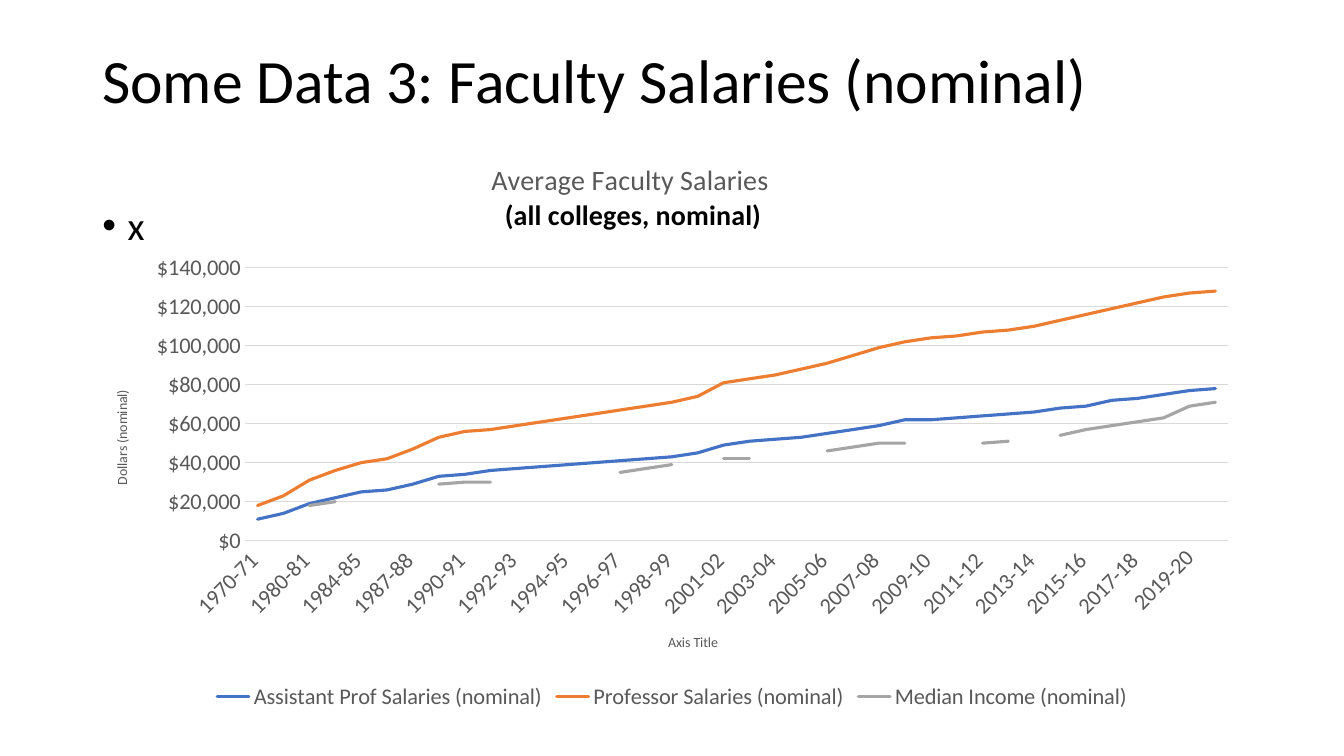
import pptx
import pptx.chart.data
import pptx.dml.color
import pptx.enum.chart
import pptx.enum.text
import pptx.oxml
import pptx.oxml.ns
import pptx.util

PX = 9525  # EMU per px, 96 px to the inch


class Theme:
    font = "Calibri"
    ink, muted, rule = "000000", "595959", "D9D9D9"
    series = ("4472C4", "ED7D31", "A5A5A5")
    title, body, chart_title, label, axis_title = 44, 28, 20, 16, 10
    line, hairline = 2.25, 0.75


YEARS = """1970-71 1975-76 1980-81 1982-83 1984-85 1985-86 1987-88 1989-90 1990-91 1991-92
1992-93 1993-94 1994-95 1995-96 1996-97 1997-98 1998-99 1999-2000 2001-02 2002-03 2003-04
2004-05 2005-06 2006-07 2007-08 2008-09 2009-10 2010-11 2011-12 2012-13 2013-14 2014-15
2015-16 2016-17 2017-18 2018-19 2019-20 2020-21""".split()

# Thousands of dollars; None leaves a gap in the line
SALARIES = {
    "Assistant Prof Salaries (nominal)": [
        11, 14, 19, 22, 25, 26, 29, 33, 34, 36, 37, 38, 39, 40, 41, 42, 43, 45, 49,
        51, 52, 53, 55, 57, 59, 62, 62, 63, 64, 65, 66, 68, 69, 72, 73, 75, 77, 78],
    "Professor Salaries (nominal)": [
        18, 23, 31, 36, 40, 42, 47, 53, 56, 57, 59, 61, 63, 65, 67, 69, 71, 74, 81,
        83, 85, 88, 91, 95, 99, 102, 104, 105, 107, 108, 110, 113, 116, 119, 122, 125, 127, 128],
    "Median Income (nominal)": [
        9, None, 18, 20, None, 21, None, 29, 30, 30, None, None, None, None, 35, 37, 39, None, 42,
        42, None, None, 46, 48, 50, 50, None, None, 50, 51, None, 54, 57, 59, 61, 63, 69, 71],
}


def rgb(color):
    return pptx.dml.color.RGBColor.from_string(color)


def style(font, size, color, bold=False):
    font.name, font.size, font.bold = Theme.font, pptx.util.Pt(size), bold
    font.color.rgb = rgb(color)


def stroke(line, color, width):
    line.color.rgb = rgb(color)
    line.width = pptx.util.Pt(width)


def add_text(page, box, text, size):
    frame = page.shapes.add_textbox(*(PX * length for length in box)).text_frame
    frame.word_wrap = True
    para = frame.paragraphs[0]
    para.text = text
    para.line_spacing = 0.9
    style(para.runs[0].font, size, Theme.ink)
    return frame


def add_title(page, box):
    frame = add_text(page, box, "Some Data 3: Faculty Salaries (nominal)", Theme.title)
    frame.vertical_anchor = pptx.enum.text.MSO_ANCHOR.MIDDLE


def add_body(page, box):
    para = add_text(page, box, "x", Theme.body).paragraphs[0]
    para.space_before = pptx.util.Pt(10)
    # Hanging bullet
    properties = para._p.get_or_add_pPr()
    properties.set("marL", str(24 * PX))
    properties.set("indent", str(-24 * PX))
    namespace = pptx.oxml.ns.nsdecls("a")
    properties.append(pptx.oxml.parse_xml(f'<a:buFont {namespace} typeface="Arial"/>'))
    properties.append(pptx.oxml.parse_xml(f'<a:buChar {namespace} char="•"/>'))


def place(element, index, box, **lengths):
    """Fix a chart part at px lengths counted from the chart's corner."""
    for old in element.findall(pptx.oxml.ns.qn("c:layout")):
        element.remove(old)
    whole = {"x": box[2], "w": box[2], "y": box[3], "h": box[3]}
    target = '<c:layoutTarget val="inner"/>' if "w" in lengths else ""
    modes = "".join(f'<c:{key}Mode val="edge"/>' for key in "xy")
    sizes = "".join(f'<c:{key} val="{length / whole[key]}"/>' for key, length in lengths.items())
    element.insert(index, pptx.oxml.parse_xml(
        f'<c:layout {pptx.oxml.ns.nsdecls("c")}><c:manualLayout>'
        f'{target}{modes}{sizes}</c:manualLayout></c:layout>'))


def set_title(title, lines, box, x, y):
    """Write a chart or axis title from (text, size, color, bold) lines."""
    frame = title.text_frame
    frame.text = "\n".join(line[0] for line in lines)
    for para, (_, size, color, bold) in zip(frame.paragraphs, lines):
        style(para.runs[0].font, size, color, bold)
    place(title._element, 1, box, x=x, y=y)


def style_axes(chart, box):
    years, dollars = chart.category_axis, chart.value_axis
    for axis, text, x, y in ((years, "Axis Title", 546, 461),
                             (dollars, "Dollars (nominal)", 17, 229)):
        axis.major_tick_mark = axis.minor_tick_mark = pptx.enum.chart.XL_TICK_MARK.NONE
        style(axis.tick_labels.font, Theme.label, Theme.muted)
        set_title(axis.axis_title, [(text, Theme.axis_title, Theme.muted, False)], box, x, y)

    # Years: every second label, slanted
    stroke(years.format.line, Theme.rule, Theme.hairline)
    qn = pptx.oxml.ns.qn
    years._element.find(qn("c:txPr")).find(qn("a:bodyPr")).set("rot", str(-45 * 60000))
    years._element.find(qn("c:noMultiLvlLbl")).addprevious(pptx.oxml.parse_xml(
        f'<c:tickLblSkip {pptx.oxml.ns.nsdecls("c")} val="2"/>'))

    # Dollars: grid only
    dollars.minimum_scale, dollars.maximum_scale, dollars.major_unit = 0, 140000, 20000
    dollars.format.line.fill.background()
    stroke(dollars.major_gridlines.format.line, Theme.rule, Theme.hairline)
    dollars.tick_labels.number_format = '"$"#,##0'
    dollars.tick_labels.number_format_is_linked = False


def add_salary_chart(page, box):
    data = pptx.chart.data.CategoryChartData(number_format="#,##0")
    # All labels but the last two end in a space
    data.categories = [f"{year} " for year in YEARS[:-2]] + YEARS[-2:]
    for name, thousands in SALARIES.items():
        data.add_series(name, [None if value is None else value * 1000 for value in thousands])
    chart = page.shapes.add_chart(
        pptx.enum.chart.XL_CHART_TYPE.LINE, *(PX * length for length in box), data).chart
    style(chart.font, Theme.axis_title, Theme.ink)

    # Lines
    chart.plots[0].vary_by_categories = False
    for series, color in zip(chart.plots[0].series, Theme.series):
        series.smooth = False
        series.marker.style = pptx.enum.chart.XL_MARKER_STYLE.NONE
        stroke(series.format.line, color, Theme.line)
        series.format.line._ln.set("cap", "rnd")

    # Title, axes and plot area
    set_title(chart.chart_title, [
        ("Average Faculty Salaries ", Theme.chart_title, Theme.muted, False),
        ("(all colleges, nominal)", Theme.chart_title, Theme.ink, True)], box, 377, 11)
    style_axes(chart, box)
    plot_area = chart._chartSpace.chart.plotArea
    place(plot_area, 0, box, x=145, y=115, w=937, h=260)

    # Legend
    chart.has_legend = True
    chart.legend.position = pptx.enum.chart.XL_LEGEND_POSITION.BOTTOM
    chart.legend.include_in_layout = False
    style(chart.legend.font, Theme.label, Theme.muted)


def main():
    deck = pptx.Presentation()
    deck.slide_width, deck.slide_height = 1280 * PX, 720 * PX
    page = deck.slides.add_slide(deck.slide_layouts[6])
    add_title(page, (88, 38, 1104, 84))
    add_body(page, (88, 192, 1141, 490))
    add_salary_chart(page, (88, 140, 1104, 541))
    deck.save("out.pptx")


if __name__ == "__main__":
    main()
